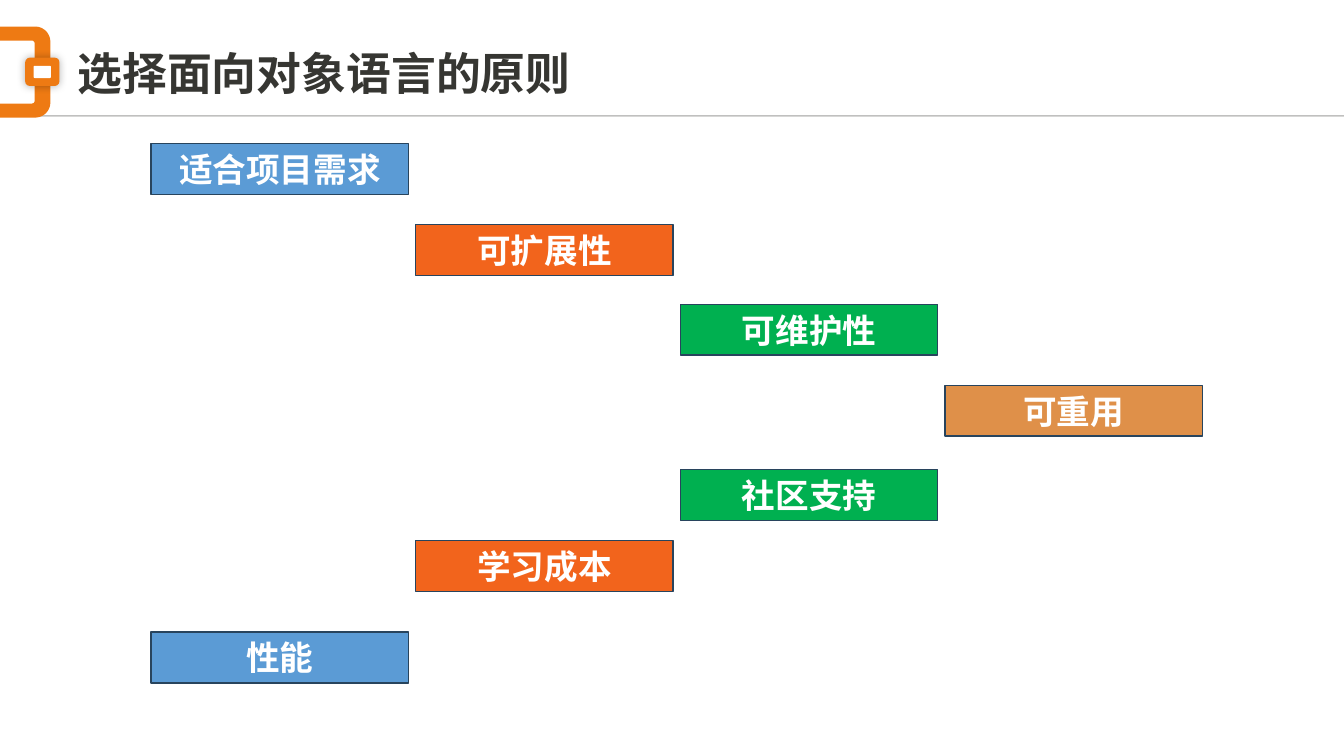
from math import cos, pi, sin

from lxml.etree import SubElement
from pptx import Presentation
from pptx.dml.color import RGBColor
from pptx.enum.shapes import MSO_CONNECTOR, MSO_SHAPE
from pptx.enum.text import MSO_ANCHOR, PP_ALIGN
from pptx.oxml.ns import qn
from pptx.util import Pt

WHITE = RGBColor(0xFF, 0xFF, 0xFF)
DARK = RGBColor(0x36, 0x36, 0x32)
NAVY = RGBColor(0x28, 0x44, 0x5D)
AMBER = RGBColor(0xEE, 0x7A, 0x13)
BLUE = RGBColor(0x5B, 0x9B, 0xD5)
ORANGE = RGBColor(0xF2, 0x64, 0x1C)
GREEN = RGBColor(0x00, 0xB0, 0x50)
TAN = RGBColor(0xDF, 0x90, 0x49)
FONT = "Arial"

TITLE = "选择面向对象语言的原则"
COLUMN_COLORS = [BLUE, ORANGE, GREEN, TAN]
# text, column, top
PRINCIPLES = [
    ("适合项目需求", 0, 102.7),
    ("可扩展性", 1, 160.5),
    ("可维护性", 2, 217.3),
    ("可重用", 3, 275.2),
    ("社区支持", 2, 335.5),
    ("学习成本", 1, 386.2),
    ("性能", 0, 451.5),
]
BOX_LEFT, BOX_WIDTH, BOX_HEIGHT, COLUMN_STEP = 108, 183.8, 36.3, 189

prs = Presentation()
prs.slide_width, prs.slide_height = Pt(960), Pt(540)
s = prs.slides.add_slide(prs.slide_layouts[5])


def style_text(p, size, color, align):
    p.alignment = align
    for r in p.runs:
        r.font.name, r.font.size, r.font.bold = FONT, Pt(size), True
        r.font.color.rgb = color


def add_box(kind, left, top, width, height, fill):
    sp = s.shapes.add_shape(kind, Pt(left), Pt(top), Pt(width), Pt(height))
    sp.shadow.inherit = False
    sp.fill.solid()
    sp.fill.fore_color.rgb = fill
    sp.line.fill.background()
    return sp


def add_tab(top, right, bottom, radius, fill):
    """Draw a block from the left slide edge with rounded right corners."""
    points = []
    for center_y, start in ((top + radius, -pi / 2), (bottom - radius, 0)):
        for step in range(13):
            angle = start + step * pi / 24
            points.append((Pt(right - radius + radius * cos(angle)),
                           Pt(center_y + radius * sin(angle))))
    builder = s.shapes.build_freeform(0, Pt(top))
    builder.add_line_segments(points + [(0, Pt(bottom))], close=True)
    sp = builder.convert_to_shape()
    sp.shadow.inherit = False
    sp.fill.solid()
    sp.fill.fore_color.rgb = fill
    sp.line.fill.background()


def add_alpha(color, percent):
    SubElement(color, qn("a:alpha")).set("val", str(percent * 1000))


# Header rule and emblem
rule = s.shapes.add_connector(MSO_CONNECTOR.STRAIGHT, Pt(18), Pt(82.8), Pt(960), Pt(82.8))
rule.line.color.rgb = DARK
rule.line.width = Pt(1)
add_alpha(next(rule.line._ln.iter(qn("a:srgbClr"))), 31)
SubElement(rule._element.spPr, qn("a:effectLst"))

add_tab(19, 36, 84, 10.8, AMBER)
add_tab(29, 24.8, 74, 2.4, WHITE)
link = add_box(MSO_SHAPE.ROUNDED_RECTANGLE, 18, 41.2, 24.5, 20.2, AMBER)
effects = link._element.spPr.find(qn("a:effectLst"))
shadow = SubElement(effects, qn("a:outerShdw"), blurRad=str(Pt(6)), dist="0", dir="0")
add_alpha(SubElement(shadow, qn("a:srgbClr"), val="000000"), 30)
hole = add_box(MSO_SHAPE.ROUNDED_RECTANGLE, 24, 47, 12.4, 8.8, WHITE)
hole.adjustments[0] = 0.1

# Title
title = s.shapes.title
title.left, title.top, title.width, title.height = Pt(48.2), Pt(28.8), Pt(886.3), Pt(46)
tf = title.text_frame
tf.text = TITLE
tf.vertical_anchor = MSO_ANCHOR.MIDDLE
style_text(tf.paragraphs[0], 32, DARK, PP_ALIGN.LEFT)

# Principles
for text, column, top in PRINCIPLES:
    box = add_box(MSO_SHAPE.RECTANGLE, BOX_LEFT + column * COLUMN_STEP, top,
                  BOX_WIDTH, BOX_HEIGHT, COLUMN_COLORS[column])
    box.line.color.rgb = NAVY
    box.line.width = Pt(1)
    tf = box.text_frame
    tf.text = text
    tf.vertical_anchor = MSO_ANCHOR.MIDDLE
    style_text(tf.paragraphs[0], 24, WHITE, PP_ALIGN.CENTER)

prs.save("out.pptx")
